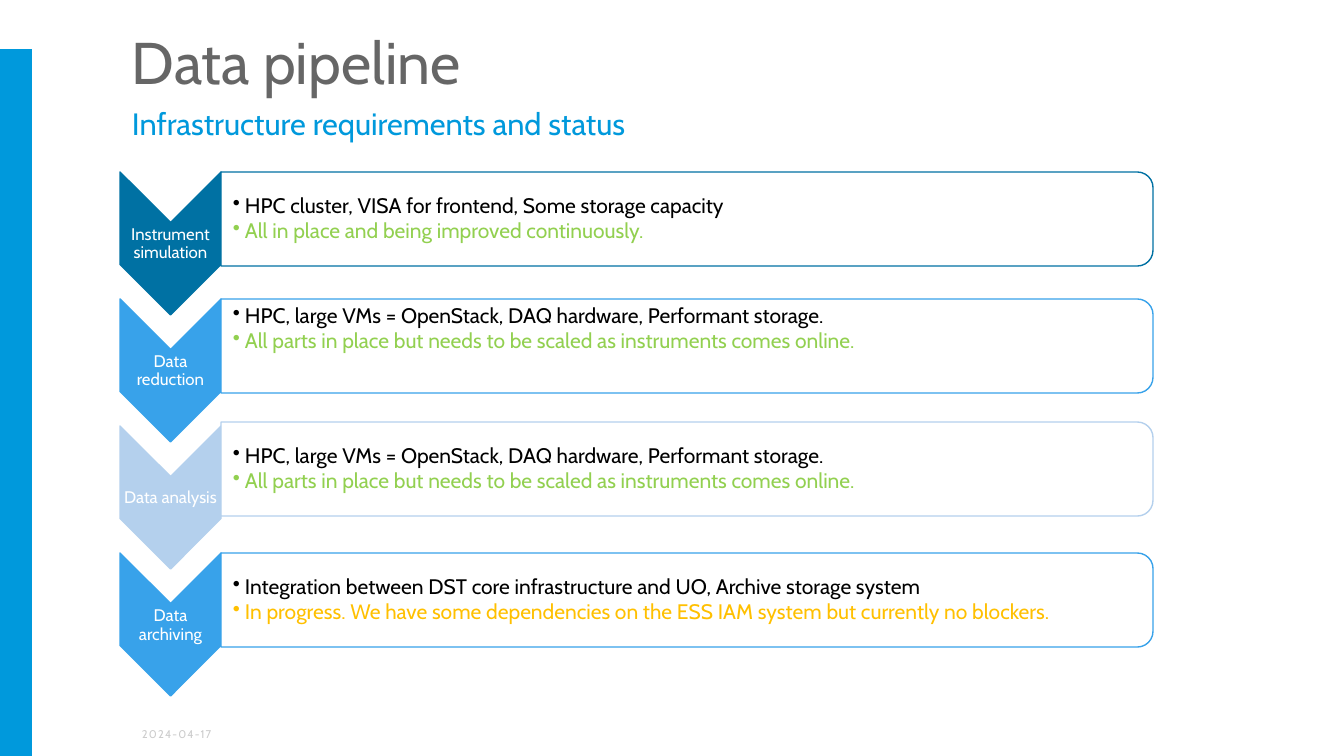
from lxml.etree import SubElement
from pptx import Presentation
from pptx.dml.color import RGBColor
from pptx.enum.shapes import MSO_SHAPE
from pptx.enum.text import MSO_ANCHOR, MSO_AUTO_SIZE, PP_ALIGN
from pptx.oxml.ns import qn
from pptx.util import Pt

EMU_PER_PX = 914400 / 100.8
COLORS = {
    "accent": "0099DC", "heading": "666666", "deep": "0071A3", "sky": "38A2EA",
    "pale": "B4D0ED", "white": "FFFFFF", "black": "000000", "done": "92D050",
    "pending": "FFC000", "date": "CCCCCC",
}
ROW_PITCH = 127
SCALED = ("HPC, large VMs = OpenStack, DAQ hardware, Performant storage.",
          "All parts in place but needs to be scaled as instruments comes online.")
STAGES = [
    {"label": "Instrument simulation", "color": "deep", "status": "done",
     "lines": ("HPC cluster, VISA for frontend, Some storage capacity",
               "All in place and being improved continuously.")},
    {"label": "Data reduction", "color": "sky", "status": "done",
     "lines": SCALED, "anchor": MSO_ANCHOR.TOP},
    {"label": "Data analysis", "color": "pale", "status": "done",
     "lines": SCALED, "panel_shift": -4},
    {"label": "Data archiving", "color": "sky", "status": "pending",
     "lines": ("Integration between DST core infrastructure and UO, Archive storage system",
               "In progress. We have some dependencies on the ESS IAM system but currently no blockers.")},
]


def px(length):
    """Turn pixels into EMU."""
    return round(length * EMU_PER_PX)


def rgb(name):
    """Look up a named colour."""
    return RGBColor.from_string(COLORS[name])


def assign(target, values):
    """Set each attribute in a dict of format values."""
    for key, value in values.items():
        setattr(target, key, value)


def place(part, box):
    """Put a part at a pixel box."""
    assign(part, dict(zip(("left", "top", "width", "height"), map(px, box))))


def write(frame, lines, size, insets, anchor=MSO_ANCHOR.TOP, bullet=False, spacing=None, **layout):
    """Fill a text frame with (text, colour) lines."""
    margins = dict(zip(("margin_left", "margin_top", "margin_right", "margin_bottom"), map(px, insets)))
    assign(frame, {"word_wrap": True, "auto_size": MSO_AUTO_SIZE.NONE,
                   "vertical_anchor": anchor, **margins})
    for index, (text, color) in enumerate(lines):
        paragraph = frame.add_paragraph() if index else frame.paragraphs[0]
        assign(paragraph, {"space_before": Pt(0), "line_spacing": 1.0, **layout})
        properties = paragraph._p.get_or_add_pPr()
        indent = px(12) if bullet else 0
        properties.set("marL", str(indent))
        properties.set("indent", str(-indent))
        if bullet:
            SubElement(properties, qn("a:buChar")).set("char", "•")
        else:
            SubElement(properties, qn("a:buNone"))
        run = paragraph.add_run()
        run.text = text
        assign(run.font, {"name": "Cabin", "size": Pt(size)})
        run.font.color.rgb = rgb(color)
        if spacing:
            run._r.get_or_add_rPr().set("spc", str(spacing))


def add_text(slide, box, lines, size, insets, **layout):
    """Add a text box."""
    caption = slide.shapes.add_textbox(*map(px, box))
    write(caption.text_frame, lines, size, insets, **layout)


def add_block(slide, preset, box, fill, line=None, turned=False):
    """Add a filled preset shape whose drawn extent is the box."""
    left, top, width, height = box
    if turned:
        left, top = left + (width - height) / 2, top + (height - width) / 2
        width, height = height, width
    block = slide.shapes.add_shape(preset, *map(px, (left, top, width, height)))
    block.shadow.inherit = False
    block.rotation = 90 if turned else 0
    block.fill.solid()
    block.fill.fore_color.rgb = rgb(fill)
    if line:
        block.line.color.rgb = rgb(line)
        block.line.width = Pt(1)
    else:
        block.line.fill.background()
    return block


def add_header(slide, box):
    """Place the title and the subtitle in their placeholders."""
    left, top, width, _ = box
    title, subtitle = slide.placeholders[0], slide.placeholders[1]
    place(title, (left, top, width, 73))
    write(title.text_frame, [("Data pipeline", "heading")], 42, (10, 5, 10, 2),
          alignment=PP_ALIGN.LEFT, line_spacing=0.9)
    place(subtitle, (left, top + 74, width, 55))
    write(subtitle.text_frame, [("Infrastructure requirements and status", "accent")],
          22, (10, 2, 10, 5), alignment=PP_ALIGN.LEFT)


def add_stage(slide, box, stage):
    """Draw one pipeline step with its requirements and status."""
    left, top, width, height = box
    chevron_width = 101
    add_block(slide, MSO_SHAPE.CHEVRON, (left, top, chevron_width, height),
              stage["color"], stage["color"], turned=True)
    add_text(slide, (left, top + 51, chevron_width, 43), [(stage["label"], "white")], 12,
             (1, 1, 1, 1), anchor=MSO_ANCHOR.MIDDLE, alignment=PP_ALIGN.CENTER, line_spacing=0.9)
    panel_left, panel_top = left + chevron_width, top + stage.get("panel_shift", 0)
    panel_width = width - chevron_width
    panel = add_block(slide, MSO_SHAPE.ROUND_2_SAME_RECTANGLE,
                      (panel_left, panel_top, panel_width, 94), "white", stage["color"], turned=True)
    fill_color = panel._element.spPr.find(qn("a:solidFill"))[0]
    SubElement(fill_color, qn("a:alpha")).set("val", "90000")
    add_text(slide, (panel_left, panel_top + 5, panel_width - 5, 84),
             list(zip(stage["lines"], ("black", stage["status"]))), 15, (12, 1, 1, 1),
             anchor=stage.get("anchor", MSO_ANCHOR.MIDDLE), bullet=True,
             line_spacing=0.9, space_after=Pt(2))


def add_pipeline(slide, box):
    """Stack the stages at an equal pitch."""
    left, top, width, height = box
    for row, stage in enumerate(STAGES):
        add_stage(slide, (left, top + row * ROW_PITCH, width, height - ROW_PITCH * (len(STAGES) - 1)), stage)


def main():
    """Build and save the slide."""
    deck = Presentation()
    assign(deck, {"slide_width": px(1344), "slide_height": px(756)})
    slide = deck.slides.add_slide(deck.slide_layouts[1])
    add_block(slide, MSO_SHAPE.RECTANGLE, (0, 49, 32, 707), "accent")
    add_header(slide, (122, 29, 1032, 129))
    add_pipeline(slide, (120, 172, 1033, 524))
    add_text(slide, (132, 714, 92, 40), [("2024-04-17", "date")], 8, (10, 5, 10, 5),
             anchor=MSO_ANCHOR.MIDDLE, spacing=80)
    deck.save("out.pptx")


if __name__ == "__main__":
    main()
